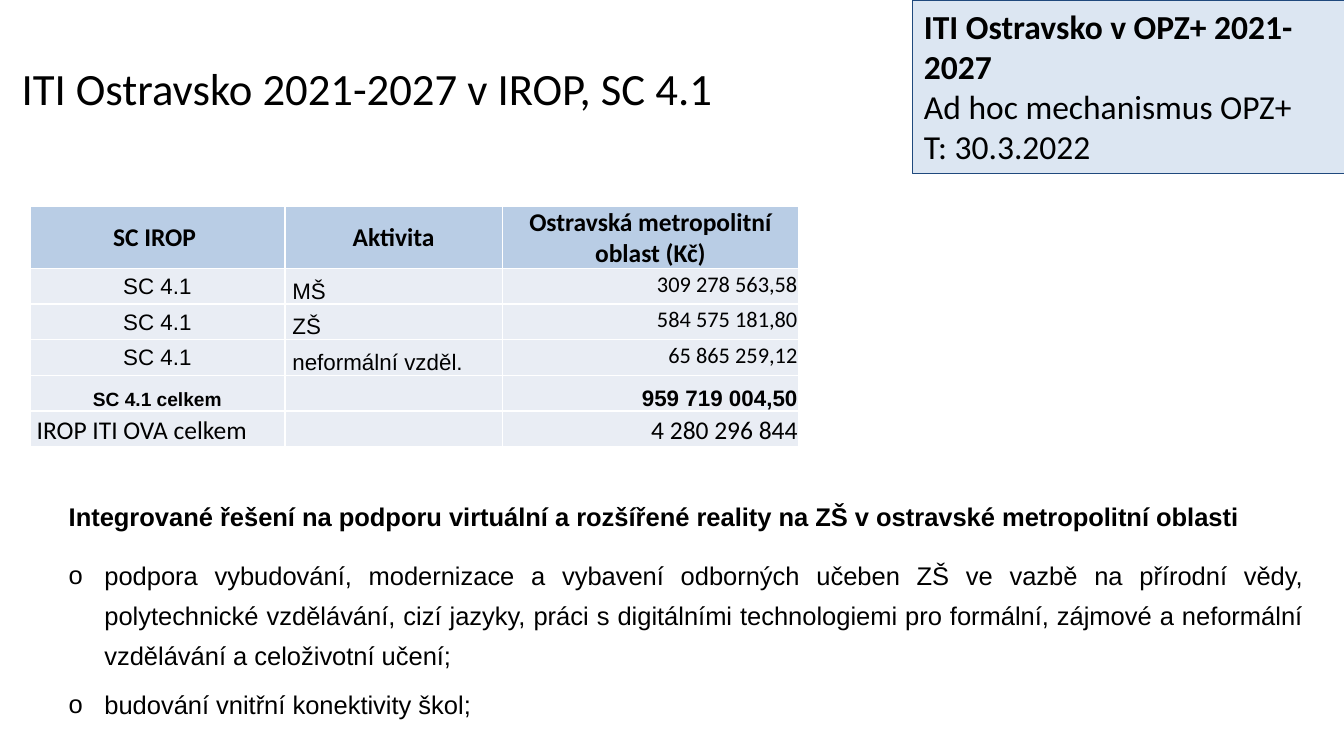
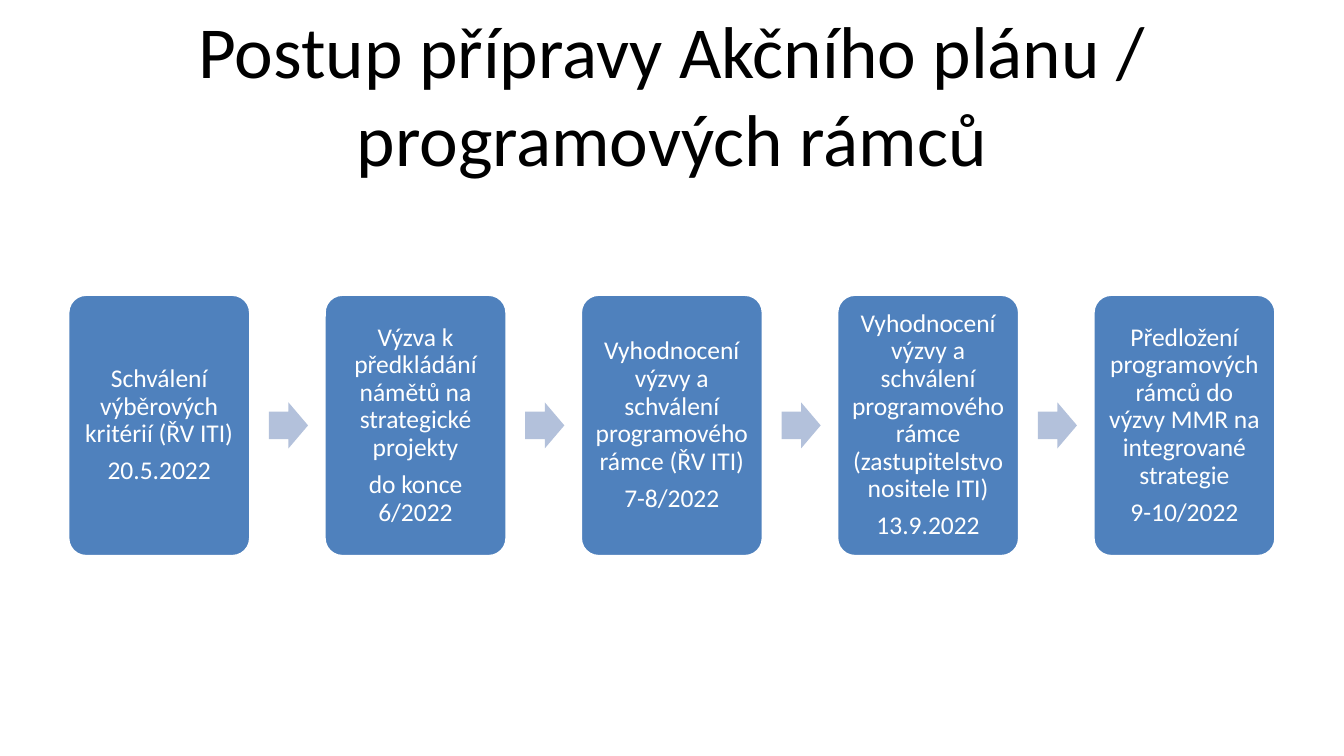
from lxml.etree import SubElement
from pptx import Presentation
from pptx.dml.color import RGBColor
from pptx.enum.shapes import MSO_SHAPE as Shape
from pptx.enum.text import MSO_ANCHOR as Anchor, PP_ALIGN as Align
from pptx.oxml.ns import qn
from pptx.util import Inches, Mm, Pt

BLACK = RGBColor(0x00, 0x00, 0x00)
WHITE = RGBColor(0xFF, 0xFF, 0xFF)
BLUE = RGBColor(0x4F, 0x81, 0xBD)
ARROW_BLUE = RGBColor(0xB3, 0xC1, 0xDB)
HEADER_BLUE = RGBColor(0xB9, 0xCD, 0xE5)
ROW_GRAY = RGBColor(0xE9, 0xED, 0xF4)
NOTE_BLUE = RGBColor(0xDC, 0xE6, 0xF2)
NOTE_LINE = RGBColor(0x1F, 0x49, 0x7D)

BUDGET_TITLE = "ITI Ostravsko 2021-2027 v IROP, SC 4.1"
HEADERS = ["SC IROP ", "Aktivita", "Ostravská metropolitní oblast (Kč)"]
ACTIVITIES = [
    ("SC 4.1", " MŠ", "309 278 563,58"),
    ("SC 4.1", " ZŠ", "584 575 181,80"),
    ("SC 4.1", " neformální vzděl.", "65 865 259,12"),
]
SUBTOTAL = ("SC 4.1 celkem", "", "959 719 004,50")
TOTAL = (" IROP ITI OVA celkem", "", "4 280 296 844")
COLUMN_WIDTHS = [2.22, 1.89, 2.58]
ROW_HEIGHTS = [0.54] + [0.31] * 5

NOTE_HEADING = "ITI Ostravsko v OPZ+ 2021-2027"
NOTE_LINES = ["Ad hoc mechanismus OPZ+", "T: 30.3.2022"]

SOLUTION = "Integrované řešení na podporu virtuální a rozšířené reality na ZŠ v ostravské metropolitní oblasti"
MEASURES = [
    "podpora vybudování, modernizace a vybavení odborných učeben ZŠ ve vazbě na přírodní vědy, "
    "polytechnické vzdělávání, cizí jazyky, práci s digitálními technologiemi pro formální, "
    "zájmové a neformální vzdělávání a celoživotní učení;",
    "budování vnitřní konektivity škol;",
]

PROCESS_TITLE = "Postup přípravy Akčního plánu / programových rámců"
STEPS = [
    ("Schválení výběrových kritérií (ŘV ITI)", "20.5.2022"),
    ("Výzva k předkládání námětů na strategické projekty", "do konce 6/2022"),
    ("Vyhodnocení výzvy a schválení programového rámce (ŘV ITI)", "7-8/2022"),
    ("Vyhodnocení výzvy a schválení programového rámce (zastupitelstvo nositele ITI)", "13.9.2022"),
    ("Předložení programových rámců do výzvy MMR na integrované strategie", "9-10/2022"),
]
STEP_LEFT, STEP_TOP, STEP_WIDTH, STEP_HEIGHT, STEP_PITCH = 0.59, 2.56, 1.59, 2.28, 2.23
ARROW_WIDTH, ARROW_HEIGHT, ARROW_OFFSET = 0.34, 0.4, 1.75


def write(frame, text, size=16, font="Calibri", color=BLACK, bold=False, align=Align.LEFT,
          spacing=None, before=0, after=0, margin=0, indent=0, bullet=None):
    first = frame.paragraphs[0]
    para = frame.add_paragraph() if first.runs else first
    para.alignment, para.line_spacing = align, spacing
    para.space_before, para.space_after = Pt(before), Pt(after)
    props = para._p.get_or_add_pPr()
    props.set("marL", str(Inches(margin)))
    props.set("indent", str(Inches(indent)))
    if bullet:
        SubElement(props, qn("a:buFont")).set("typeface", font)
        SubElement(props, qn("a:buChar")).set("char", bullet)
    span = para.add_run()
    span.text = text
    span.font.size, span.font.name, span.font.bold = Pt(size), font, bold
    span.font.color.rgb = color


def set_insets(target, left, top, right, bottom):
    target.margin_left, target.margin_top = Inches(left), Inches(top)
    target.margin_right, target.margin_bottom = Inches(right), Inches(bottom)


def add_text_box(page, *place):
    frame = page.shapes.add_textbox(*map(Inches, place)).text_frame
    frame.word_wrap = True
    return frame


def add_title(page, text, size, *place):
    frame = add_text_box(page, *place)
    frame.vertical_anchor = Anchor.MIDDLE
    set_insets(frame, 0.12, 0.06, 0.12, 0.06)
    write(frame, text, size=size, align=Align.CENTER)


def add_box(page, kind, place, fill, line=None, line_width=0, adjustments=()):
    box = page.shapes.add_shape(kind, *map(Inches, place))
    box.shadow.inherit = False
    box.fill.solid()
    box.fill.fore_color.rgb = fill
    if line is None:
        box.line.fill.background()
    else:
        box.line.color.rgb = line
        box.line.width = Pt(line_width)
    for index, value in enumerate(adjustments):
        box.adjustments[index] = value
    box.text_frame.word_wrap = True
    return box


def add_cell_borders(cell):
    props = cell._tc.get_or_add_tcPr()
    for side in ("lnL", "lnR", "lnT", "lnB"):
        line = SubElement(props, qn(f"a:{side}"), w=str(Pt(1)))
        fill = SubElement(line, qn("a:solidFill"))
        SubElement(fill, qn("a:srgbClr"), val=str(WHITE))


def fill_cell(cell, text, fill=ROW_GRAY, anchor=Anchor.BOTTOM, bottom=0, **style):
    add_cell_borders(cell)
    cell.fill.solid()
    cell.fill.fore_color.rgb = fill
    cell.vertical_anchor = anchor
    set_insets(cell, 0.01, 0.01, 0.01, bottom)
    if text:
        write(cell.text_frame, text, **style)
    else:
        cell.text_frame.paragraphs[0].font.size = Pt(12)


def add_budget_table(page):
    center = dict(anchor=Anchor.MIDDLE, align=Align.CENTER)
    heading = dict(center, fill=HEADER_BLUE, bold=True)
    activity = [
        dict(center, size=14, font="Arial"),
        dict(size=14, font="Arial"),
        dict(size=14, align=Align.RIGHT, bottom=0.05),
    ]
    subtotal = [
        dict(size=12, font="Arial", bold=True, align=Align.CENTER),
        {},
        dict(size=14, font="Arial", bold=True, align=Align.RIGHT),
    ]
    total = [{}, {}, dict(align=Align.RIGHT)]
    rows = [(HEADERS, [heading] * 3)] + [(texts, activity) for texts in ACTIVITIES]
    rows += [(SUBTOTAL, subtotal), (TOTAL, total)]

    place = (0.26, 1.79, sum(COLUMN_WIDTHS), sum(ROW_HEIGHTS))
    table = page.shapes.add_table(len(rows), len(HEADERS), *map(Inches, place)).table
    table.first_row = table.horz_banding = False
    for column, width in zip(table.columns, COLUMN_WIDTHS):
        column.width = Inches(width)
    for row, height, (texts, styles) in zip(table.rows, ROW_HEIGHTS, rows):
        row.height = Inches(height)
        for cell, text, style in zip(row.cells, texts, styles):
            fill_cell(cell, text, **style)


def build_budget(page):
    add_title(page, BUDGET_TITLE, 28, 0.03, 0.37, 6.32, 0.79)
    add_budget_table(page)

    frame = add_text_box(page, 0, 4.23, 11.44, 2.07)
    body = dict(font="Arial", align=Align.JUSTIFY, spacing=1.3, after=6)
    write(frame, SOLUTION, bold=True, before=6, margin=0.5, **body)
    for text, before in zip(MEASURES, (6, 0)):
        write(frame, text, before=before, margin=0.81, indent=-0.31, bullet="o", **body)

    note = add_box(page, Shape.RECTANGLE, (7.94, 0, 3.78, 1.51), NOTE_BLUE, NOTE_LINE, 0.75)
    note.text_frame.vertical_anchor = Anchor.TOP
    write(note.text_frame, NOTE_HEADING, size=21, bold=True)
    for text in NOTE_LINES:
        write(note.text_frame, text, size=21)


def build_process(page):
    add_title(page, PROCESS_TITLE, 45.9, 0.58, 0.26, 10.53, 1.1)
    arrow_top = STEP_TOP + (STEP_HEIGHT - ARROW_HEIGHT) / 2
    for index, texts in enumerate(STEPS):
        left = STEP_LEFT + index * STEP_PITCH
        place = (left, STEP_TOP, STEP_WIDTH, STEP_HEIGHT)
        step = add_box(page, Shape.ROUNDED_RECTANGLE, place, BLUE, WHITE, 2, [0.1])
        frame = step.text_frame
        frame.vertical_anchor = Anchor.MIDDLE
        set_insets(frame, 0.07, 0.07, 0.07, 0.07)
        for text in texts:
            write(frame, text, color=WHITE, align=Align.CENTER, spacing=0.9, after=6)
        if index < len(STEPS) - 1:
            place = (left + ARROW_OFFSET, arrow_top, ARROW_WIDTH, ARROW_HEIGHT)
            add_box(page, Shape.RIGHT_ARROW, place, ARROW_BLUE, adjustments=[0.6, 0.5])


def main():
    deck = Presentation()
    deck.slide_width = Mm(297)
    deck.slide_height = Mm(167)
    for build in (build_budget, build_process):
        build(deck.slides.add_slide(deck.slide_layouts[6]))
    deck.save("out.pptx")


if __name__ == "__main__":
    main()
